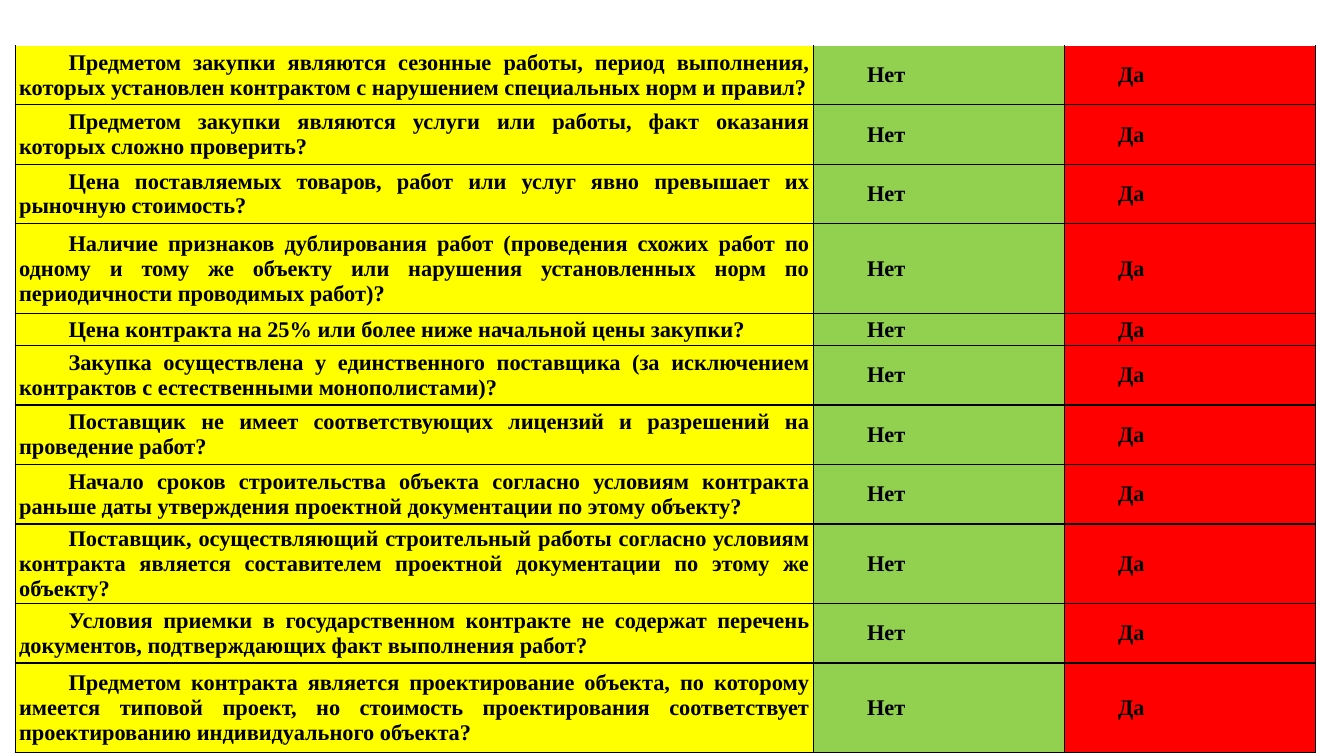
from dataclasses import dataclass

from lxml.etree import SubElement
from pptx import Presentation
from pptx.dml.color import RGBColor
from pptx.enum.text import MSO_ANCHOR, PP_ALIGN
from pptx.oxml.ns import qn
from pptx.table import _Cell
from pptx.util import Inches, Pt

BLACK = RGBColor(0x00, 0x00, 0x00)
YELLOW = RGBColor(0xFF, 0xFF, 0x00)
GREEN = RGBColor(0x92, 0xD0, 0x50)
RED = RGBColor(0xFF, 0x00, 0x00)

CELL_FORMAT = {
    "margin_left": Inches(0.04),
    "margin_right": Inches(0.04),
    "margin_top": 0,
    "margin_bottom": 0,
    "vertical_anchor": MSO_ANCHOR.MIDDLE,
}
FONT_FORMAT = {"name": "Times New Roman", "size": Pt(16), "bold": True}
FIRST_LINE_INDENT = Inches(0.49)
COLUMN_WIDTHS = (7.92, 2.49, 2.49)
COLUMN_FILLS = (YELLOW, GREEN, RED)


@dataclass(frozen=True)
class RiskQuestion:
    height: float
    text: str


QUESTIONS = (
    RiskQuestion(0.59, "Предметом закупки являются сезонные работы, период выполнения, "
                 "которых установлен контрактом с нарушением специальных норм и правил?"),
    RiskQuestion(0.59, "Предметом закупки являются услуги или работы, факт оказания "
                 "которых сложно проверить?"),
    RiskQuestion(0.59, "Цена поставляемых товаров, работ или услуг явно превышает их "
                 "рыночную стоимость?"),
    RiskQuestion(0.89, "Наличие признаков дублирования работ (проведения схожих работ по "
                 "одному и тому же объекту или нарушения установленных норм по "
                 "периодичности проводимых работ)?"),
    RiskQuestion(0.32, "Цена контракта на 25% или более ниже начальной цены закупки?"),
    RiskQuestion(0.59, "Закупка осуществлена у единственного поставщика (за исключением "
                 "контрактов с естественными монополистами)?"),
    RiskQuestion(0.59, "Поставщик не имеет соответствующих лицензий и разрешений на "
                 "проведение работ?"),
    RiskQuestion(0.59, "Начало сроков строительства объекта согласно условиям контракта "
                 "раньше даты утверждения проектной документации по этому объекту?"),
    RiskQuestion(0.79, "Поставщик, осуществляющий строительный работы согласно условиям "
                 "контракта является составителем проектной документации по этому же "
                 "объекту?"),
    RiskQuestion(0.59, "Условия приемки в государственном контракте не содержат перечень "
                 "документов, подтверждающих факт выполнения работ?"),
    RiskQuestion(0.89, "Предметом контракта является проектирование объекта, по которому "
                 "имеется типовой проект, но стоимость проектирования соответствует "
                 "проектированию индивидуального объекта?"),
)


def add_borders(cell: _Cell, sides: str) -> None:
    """Draw thin black borders; called before the fill, as the schema orders."""
    properties = cell._tc.get_or_add_tcPr()
    for side in sides:
        line = SubElement(properties, qn(f"a:ln{side}"), w=str(Pt(1)))
        fill = SubElement(line, qn("a:solidFill"))
        SubElement(fill, qn("a:srgbClr"), val=str(BLACK))


def fill_cell(cell: _Cell, text: str, color: RGBColor, sides: str) -> None:
    for name, value in CELL_FORMAT.items():
        setattr(cell, name, value)
    add_borders(cell, sides)
    cell.fill.solid()
    cell.fill.fore_color.rgb = color

    para = cell.text_frame.paragraphs[0]
    para.alignment = PP_ALIGN.JUSTIFY
    para._p.get_or_add_pPr().set("indent", str(FIRST_LINE_INDENT))
    span = para.add_run()
    span.text = text
    for name, value in FONT_FORMAT.items():
        setattr(span.font, name, value)
    span.font.color.rgb = BLACK


def main() -> None:
    deck = Presentation()
    deck.slide_width, deck.slide_height = Inches(13.33), Inches(7.5)
    page = deck.slides.add_slide(deck.slide_layouts[6])

    # Table grid
    table = page.shapes.add_table(
        len(QUESTIONS), len(COLUMN_WIDTHS),
        Inches(0.15), Inches(0.45), Inches(12.91), Inches(7.05),
    ).table
    table.first_row = table.horz_banding = False
    for column, width in zip(table.columns, COLUMN_WIDTHS):
        column.width = Inches(width)

    # Questions with their answers; the top edge stays open
    for index, question in enumerate(QUESTIONS):
        table.rows[index].height = Inches(question.height)
        sides = "LRTB" if index else "LRB"
        texts = (question.text, "Нет", "Да")
        for cell, text, color in zip(table.rows[index].cells, texts, COLUMN_FILLS):
            fill_cell(cell, text, color, sides)

    deck.save("out.pptx")


if __name__ == "__main__":
    main()
